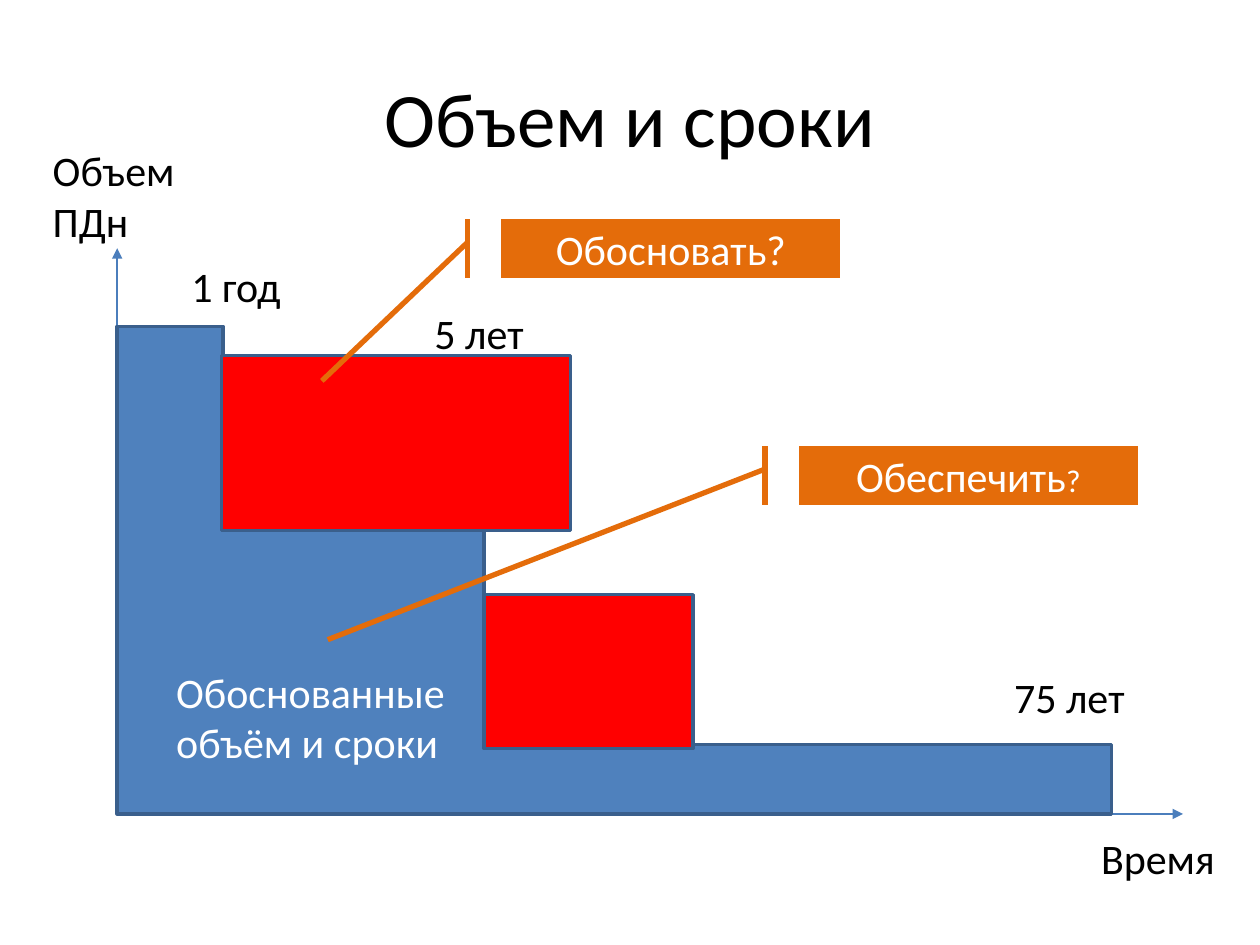
import pptx
import pptx.dml.color
import pptx.enum.shapes
import pptx.enum.text
import pptx.oxml
import pptx.oxml.ns
import pptx.util

Inches = pptx.util.Inches
Pt = pptx.util.Pt
RGBColor = pptx.dml.color.RGBColor
SHAPE = pptx.enum.shapes.MSO_SHAPE
ALIGN = pptx.enum.text.PP_ALIGN
ANCHOR = pptx.enum.text.MSO_ANCHOR
AUTO_SIZE = pptx.enum.text.MSO_AUTO_SIZE

BLACK = RGBColor(0x00, 0x00, 0x00)
WHITE = RGBColor(0xFF, 0xFF, 0xFF)
BLUE = RGBColor(0x4F, 0x81, 0xBD)
AXIS_BLUE = RGBColor(0x4B, 0x7E, 0xBC)
EDGE_BLUE = RGBColor(0x3A, 0x5F, 0x8C)
RED = RGBColor(0xFF, 0x00, 0x00)
ORANGE = RGBColor(0xE4, 0x6C, 0x0A)

CENTRED = {"word_wrap": True, "vertical_anchor": ANCHOR.MIDDLE}
GROWING = {"word_wrap": True, "auto_size": AUTO_SIZE.SHAPE_TO_FIT_TEXT}


def set_values(target, values):
    """Set each named attribute of the target."""
    for name, value in values.items():
        setattr(target, name, value)


def write(shape, runs, color, frame_values, align=None):
    """Write (text, size) runs as one paragraph of the shape."""
    frame = shape.text_frame
    set_values(frame, frame_values)
    paragraph = frame.paragraphs[0]
    paragraph.alignment = align
    for text, size in runs:
        run = paragraph.add_run()
        run.text = text
        set_values(run.font, {"name": "Calibri", "size": Pt(size)})
        run.font.color.rgb = color


def paint(shape, fill, edge, width):
    """Give the shape a flat fill and an outline."""
    shape.shadow.inherit = False
    shape.fill.solid()
    shape.fill.fore_color.rgb = fill
    shape.line.color.rgb = edge
    shape.line.width = Pt(width)


def add_title(slide, left, top, width, height):
    """Place the centred heading in its box."""
    title = slide.shapes.add_textbox(left, top, width, height)
    write(title, [("Объем и сроки", 44)], BLACK, CENTRED, ALIGN.CENTER)


def add_axis(slide, start, end):
    """Draw an axis with an arrowhead at its end."""
    axis = slide.shapes.add_connector(
        pptx.enum.shapes.MSO_CONNECTOR.STRAIGHT, *start, *end)
    axis.line.color.rgb = AXIS_BLUE
    axis.line.width = Pt(1.5)
    qn = pptx.oxml.ns.qn
    outline = axis.line._get_or_add_ln()
    outline.append(outline.makeelement(qn("a:tailEnd"), {"type": "triangle"}))
    properties = outline.getparent()
    properties.append(properties.makeelement(qn("a:effectLst"), {}))


def add_staircase(slide, left, bottom, steps):
    """Draw the stepped area from (right edge, height) pairs."""
    corners = []
    start = 0
    for right, height in steps:
        corners += [(start, height), (right, height)]
        start = right
    corners.append((start, 0))
    outline = slide.shapes.build_freeform(left, bottom)
    outline.add_line_segments(
        [(left + Inches(x), bottom - Inches(y)) for x, y in corners])
    paint(outline.convert_to_shape(), BLUE, EDGE_BLUE, 2)


def add_diagram(slide, left, top, width, height):
    """Draw axes, areas and labels, measured right and up from the origin."""
    bottom = top + height
    add_axis(slide, (left, bottom), (left, top))
    add_axis(slide, (left, bottom), (left + width, bottom))
    add_staircase(slide, left, bottom, [(0.84, 3.87), (2.91, 2.25), (7.89, 0.55)])

    for x, y, wide, high in [(2.91, 1.74, 1.66, 1.22), (0.83, 3.64, 2.77, 1.39)]:
        excess = slide.shapes.add_shape(
            SHAPE.RECTANGLE, left + Inches(x), bottom - Inches(y),
            Inches(wide), Inches(high))
        paint(excess, RED, EDGE_BLUE, 2)

    labels = [
        ("1 год", 0.49, 4.44, 1.08, 0.5, BLACK),
        ("5 лет", 2.42, 4.07, 1.24, 0.5, BLACK),
        ("75 лет", 7.02, 1.18, 1.3, 0.5, BLACK),
        ("Объем ПДн", -0.61, 5.36, 1.21, 0.91, BLACK),
        ("Время", 7.71, -0.1, 1.21, 0.5, BLACK),
        ("Обоснованные объём и сроки", 0.37, 1.22, 2.68, 0.91, WHITE),
    ]
    for text, x, y, wide, high, color in labels:
        label = slide.shapes.add_textbox(
            left + Inches(x), bottom - Inches(y), Inches(wide), Inches(high))
        write(label, [(text, 24)], color, GROWING)


def add_callout(slide, left, top, width, height, runs, pointer):
    """Place a question whose pointer ends at (down, right) box fractions."""
    callout = slide.shapes.add_shape(
        SHAPE.LINE_CALLOUT_1_ACCENT_BAR, left, top, width, height)
    for index, value in enumerate((0.39, -0.1, *pointer)):
        callout.adjustments[index] = value
    paint(callout, ORANGE, ORANGE, 3)
    write(callout, runs, WHITE, CENTRED, ALIGN.CENTER)


def main():
    """Build and save the slide."""
    deck = pptx.Presentation()
    set_values(deck, {"slide_width": Inches(10), "slide_height": Inches(7.5)})
    slide = deck.slides.add_slide(deck.slide_layouts[6])
    add_title(slide, Inches(0.5), Inches(0.3), Inches(9), Inches(1.25))
    add_diagram(slide, Inches(0.93), Inches(1.97), Inches(8.46), Inches(4.49))
    questions = [
        (3.98, 1.74, [("Обосновать?", 24)], (2.73, -0.53)),
        (6.34, 3.54, [("Обеспечить", 24), ("?", 18)], (3.27, -1.39)),
    ]
    for left, top, runs, pointer in questions:
        add_callout(slide, Inches(left), Inches(top), Inches(2.69), Inches(0.47),
                    runs, pointer)
    deck.save("out.pptx")


if __name__ == "__main__":
    main()
